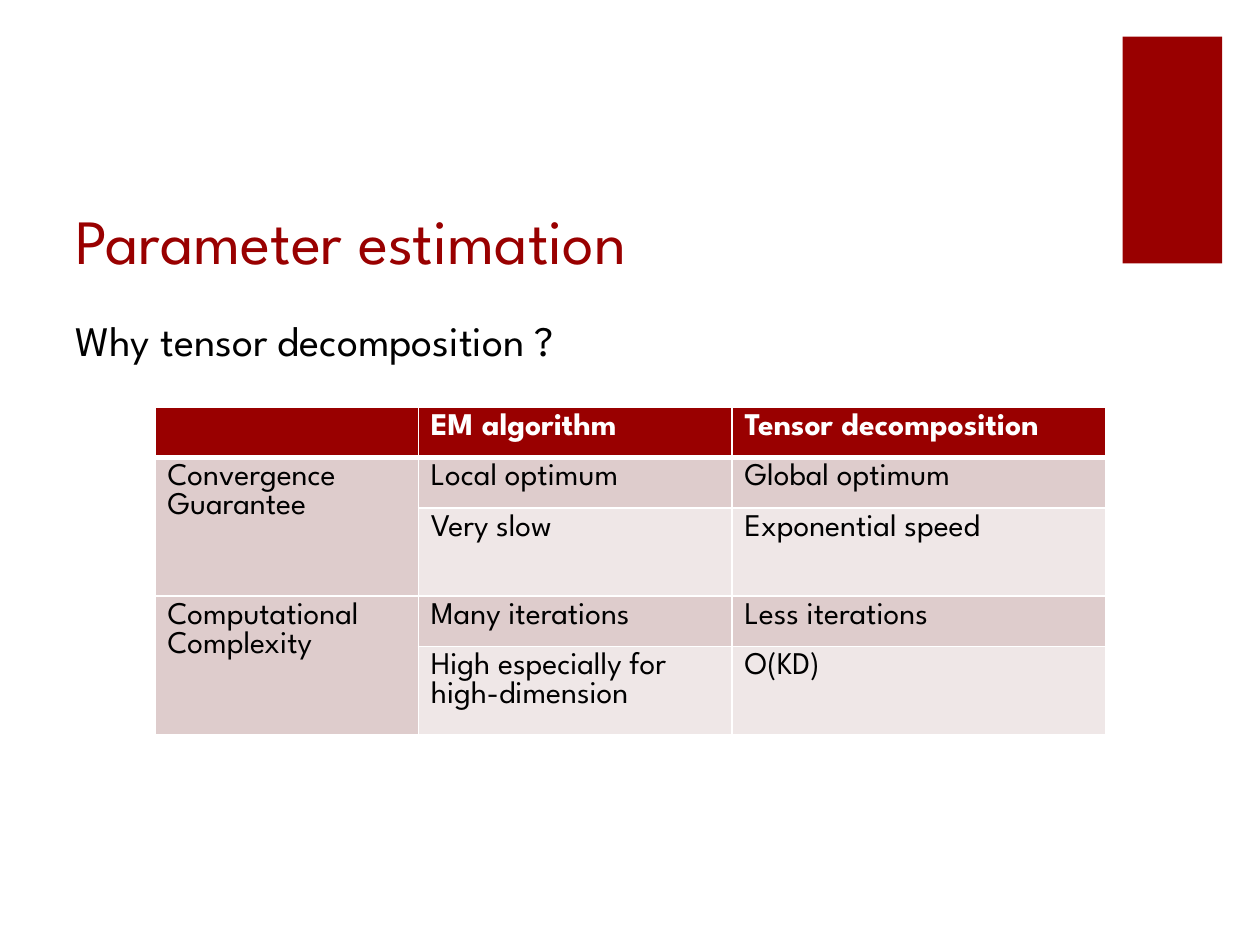
from lxml.etree import SubElement
from pptx import Presentation
from pptx.dml.color import RGBColor
from pptx.enum.shapes import MSO_SHAPE as Shape
from pptx.enum.text import MSO_ANCHOR as Anchor
from pptx.oxml.ns import qn
from pptx.util import Inches, Pt

RED, WHITE, BLACK = "990000", "FFFFFF", "000000"
ROSE, PALE_ROSE = "DECCCC", "EFE7E7"


def paint(color_format, color):
    color_format.rgb = RGBColor.from_string(color)


def write(frame, text, color, **formats):
    frame.text = text
    for paragraph in frame.paragraphs:
        for run in paragraph.runs:
            for key, value in {"name": "League Spartan", **formats}.items():
                setattr(run.font, key, value)
            paint(run.font.color, color)


deck = Presentation()
deck.slide_width, deck.slide_height = Inches(10), Inches(7.5)
slide = deck.slides.add_slide(deck.slide_layouts[6])

accent = slide.shapes.add_shape(
    Shape.RECTANGLE, Inches(8.91), Inches(0.29), Inches(0.79), Inches(1.8)
)
accent.shadow.inherit = False
accent.fill.solid()
paint(accent.fill.fore_color, RED)
accent.line.fill.background()

headings = [
    ("Parameter estimation", (0.5, 1, 7.12, 1.25), 36, RED, Anchor.BOTTOM),
    ("Why tensor decomposition ?", (0.5, 2.45, 5.57, 0.5), 24, BLACK, Anchor.TOP),
]
for text, box, size, color, anchor in headings:
    heading = slide.shapes.add_textbox(*map(Inches, box)).text_frame
    heading.word_wrap = True
    heading.vertical_anchor = anchor
    write(heading, text, color, size=Pt(size))

rows = [
    ("", "EM algorithm", "Tensor decomposition"),
    ("Convergence\nGuarantee", "Local optimum", "Global optimum"),
    ("", "Very slow", "Exponential speed"),
    ("Computational Complexity", "Many iterations", "Less iterations"),
    ("", "High especially for high-dimension", "O(KD)"),
]
row_fills = [RED, ROSE, PALE_ROSE, ROSE, PALE_ROSE]
row_heights = [0.4, 0.4, 0.7, 0.4, 0.7]
column_widths = [2.09, 2.49, 2.97]

comparison = slide.shapes.add_table(
    len(rows), len(column_widths), Inches(1.23), Inches(3.23),
    Inches(sum(column_widths)), Inches(sum(row_heights)),
).table
for column, width in zip(comparison.columns, column_widths):
    column.width = Inches(width)
for row, height in zip(comparison.rows, row_heights):
    row.height = Inches(height)

for r, texts in enumerate(rows):
    for c, text in enumerate(texts):
        cell = comparison.cell(r, c)
        is_header = r == 0
        write(cell.text_frame, text, WHITE if is_header else BLACK,
              size=Pt(18), bold=is_header)
        properties = cell._tc.get_or_add_tcPr()
        for side in ("lnL", "lnR", "lnT", "lnB"):
            under_header = (r, side) in ((0, "lnB"), (1, "lnT"))
            border = SubElement(properties, qn(f"a:{side}"), w=str(Pt(3 if under_header else 1)))
            border_fill = SubElement(border, qn("a:solidFill"))
            SubElement(border_fill, qn("a:srgbClr"), val=WHITE)
        cell.fill.solid()
        paint(cell.fill.fore_color, row_fills[r])

for top in (1, 3):
    comparison.cell(top, 0).merge(comparison.cell(top + 1, 0))

deck.save("out.pptx")
